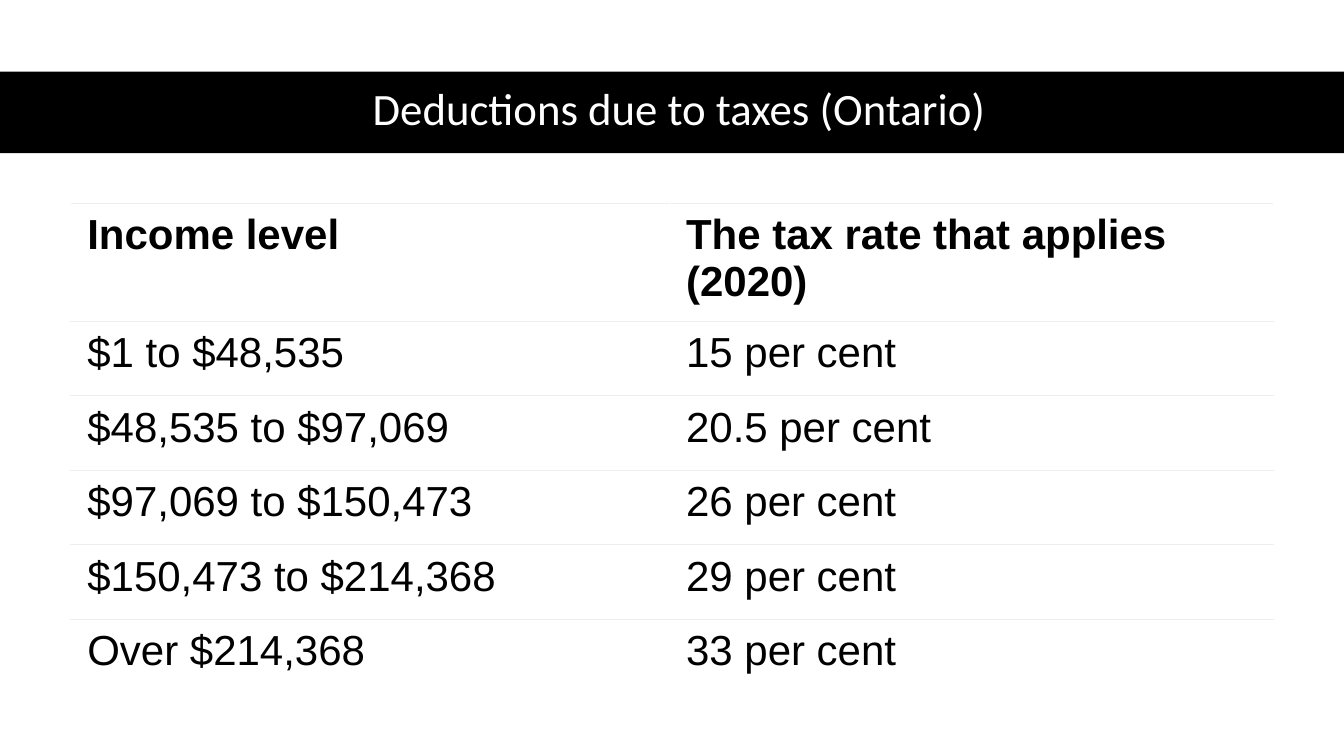
from lxml import etree
from pptx import Presentation
from pptx.dml.color import RGBColor
from pptx.enum import shapes, text
from pptx.oxml import ns
from pptx.util import Pt

BLACK = RGBColor(0x00, 0x00, 0x00)
WHITE = RGBColor(0xFF, 0xFF, 0xFF)
RULE_GREY = RGBColor(0xEC, 0xEE, 0xEF)

SLIDE_WIDTH, SLIDE_HEIGHT = Pt(960), Pt(540)
BAND_TOP, BAND_HEIGHT = Pt(51.1), Pt(58.3)
COLUMN_WIDTHS = [Pt(427.7), Pt(431.3)]
ROW_HEIGHT = Pt(53.28)

TAX_RATES = [
    ("Income level", "The tax rate that applies (2020)"),
    ("$1 to $48,535", "15 per cent"),
    ("$48,535 to $97,069", "20.5 per cent"),
    ("$97,069 to $150,473", "26 per cent"),
    ("$150,473 to $214,368", "29 per cent"),
    ("Over $214,368", "33 per cent"),
]


def add_span(para, wording, font, size, color, bold=False):
    span = para.add_run()
    span.text = wording
    span.font.name = font
    span.font.size = Pt(size)
    span.font.color.rgb = color
    span.font.bold = bold


def add_band(page):
    band = page.shapes.add_shape(
        shapes.MSO_SHAPE.RECTANGLE, 0, BAND_TOP, SLIDE_WIDTH, BAND_HEIGHT)
    band.shadow.inherit = False
    band.fill.solid()
    band.fill.fore_color.rgb = BLACK
    band.line.fill.background()


def add_title(page, wording):
    box = page.shapes.add_textbox(Pt(43.9), Pt(50.4), Pt(882.7), BAND_HEIGHT)
    frame = box.text_frame
    frame.word_wrap = True
    frame.vertical_anchor = text.MSO_ANCHOR.MIDDLE
    para = frame.paragraphs[0]
    para.alignment = text.PP_ALIGN.CENTER
    para.line_spacing = 0.9
    add_span(para, wording, "Calibri", 32, WHITE)


def add_rule(cell, edge):
    """Draw a thin grey border on one edge, given as its tag, such as a:lnT."""
    properties = cell._tc.get_or_add_tcPr()
    line = etree.SubElement(properties, ns.qn(edge), w=str(Pt(0.75)))
    fill = etree.SubElement(line, ns.qn("a:solidFill"))
    etree.SubElement(fill, ns.qn("a:srgbClr"), val=str(RULE_GREY))


def fill_cell(cell, wording, is_header, is_last):
    cell.margin_left = cell.margin_right = Pt(12)
    cell.margin_top = cell.margin_bottom = Pt(6)
    add_rule(cell, "a:lnT")
    if not is_last:
        add_rule(cell, "a:lnB")
    cell.fill.solid()
    cell.fill.fore_color.rgb = WHITE
    para = cell.text_frame.paragraphs[0]
    add_span(para, wording, "Arial", 30, BLACK, bold=is_header)


def add_rate_table(page, rows):
    frame = page.shapes.add_table(
        len(rows), len(COLUMN_WIDTHS), Pt(50.4), Pt(145.4),
        sum(COLUMN_WIDTHS), ROW_HEIGHT * len(rows))
    table = frame.table
    table.horz_banding = False
    for column, width in zip(table.columns, COLUMN_WIDTHS):
        column.width = width
    for r, wordings in enumerate(rows):
        table.rows[r].height = ROW_HEIGHT
        for c, wording in enumerate(wordings):
            fill_cell(table.cell(r, c), wording, r == 0, r == len(rows) - 1)


def main():
    deck = Presentation()
    deck.slide_width, deck.slide_height = SLIDE_WIDTH, SLIDE_HEIGHT
    page = deck.slides.add_slide(deck.slide_layouts[6])
    add_band(page)
    add_title(page, "Deductions due to taxes (Ontario)")
    add_rate_table(page, TAX_RATES)
    deck.save("out.pptx")


if __name__ == "__main__":
    main()
